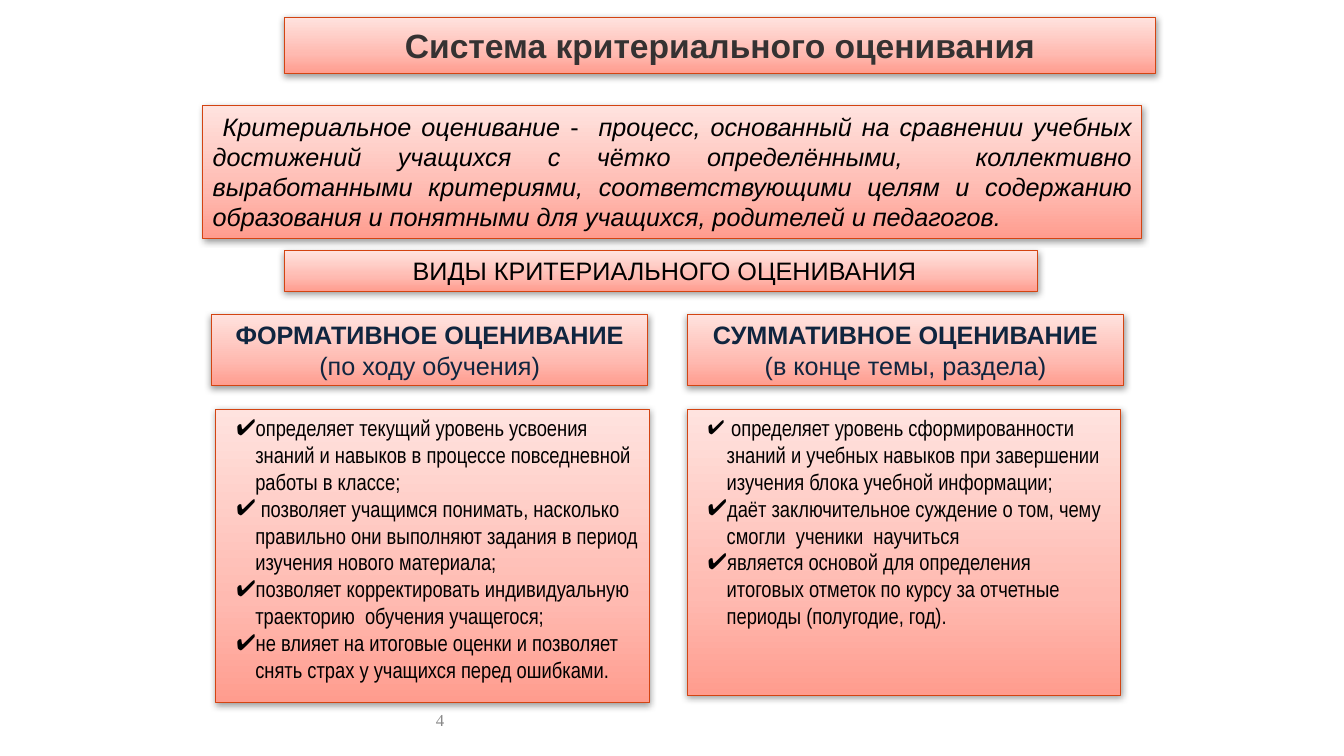
from lxml.etree import SubElement
from pptx import Presentation
from pptx.dml.color import RGBColor as RGB
from pptx.enum.shapes import MSO_SHAPE as SHAPE
from pptx.enum.text import MSO_ANCHOR as ANCHOR, MSO_AUTO_SIZE as AUTO, PP_ALIGN as ALIGN
from pptx.oxml.ns import qn
from pptx.util import Cm, Pt

COLORS = {"title": "353232", "text": "000000", "heading": "10253F", "number": "898989",
          "line": "D34412", "shadow": "000000"}
GRADIENT = {0: "FF9C8E", 35: "FFBAB1", 100: "FFE3DF"}


class Builder:
    """Holds the panel style and the current slide."""

    def __init__(self, prs):
        """Add a slide with a title and two lists."""
        self.s = prs.slides.add_slide(prs.slide_layouts[3])

    def place(self, sp, box):
        """Set the position and size in centimetres."""
        sp.left, sp.top, sp.width, sp.height = map(Cm, box)

    def decorate(self, sp):
        """Apply the gradient, outline and soft shadow."""
        sp.fill.gradient()
        sp.fill.gradient_angle = 90
        stops = sp._element.spPr.find(qn("a:gradFill")).find(qn("a:gsLst"))
        for stop in list(stops):
            stops.remove(stop)
        for pos, color in GRADIENT.items():
            stop = SubElement(stops, qn("a:gs"), pos=str(pos * 1000))
            SubElement(stop, qn("a:srgbClr"), val=color)
        sp.line.color.rgb = RGB.from_string(COLORS["line"])
        sp.line.width = Pt(0.75)
        sp.shadow.inherit = False
        effects = sp._element.spPr.find(qn("a:effectLst"))
        shadow = SubElement(effects, qn("a:outerShdw"), blurRad=str(Pt(5)), dist=str(Pt(1.6)),
                            dir="5400000", rotWithShape="0")
        color = SubElement(shadow, qn("a:srgbClr"), val=COLORS["shadow"])
        SubElement(color, qn("a:alpha"), val="38000")

    def add_text(self, sp, paragraphs, color="text", size=18, font="Arial",
                 align=ALIGN.CENTER, anchor=ANCHOR.MIDDLE):
        """Add paragraphs of (text, overrides) runs."""
        tf = sp.text_frame
        tf.word_wrap, tf.auto_size, tf.vertical_anchor = True, AUTO.NONE, anchor
        for i, runs in enumerate(paragraphs):
            p = tf.add_paragraph() if i else tf.paragraphs[0]
            p.alignment, p.space_before = align, Pt(0)
            for text, style in runs:
                r = p.add_run()
                r.text = text
                r.font.name, r.font.size = font, Pt(style.get("size", size))
                r.font.bold, r.font.italic = style.get("bold", False), style.get("italic", False)
                r.font.color.rgb = RGB.from_string(COLORS[color])

    def title(self, box, text):
        """Fill the title placeholder."""
        sp = self.s.shapes.title
        self.place(sp, box)
        self.decorate(sp)
        self.add_text(sp, [[(text, {"bold": True})]], "title", 24)

    def panel(self, box, paragraphs, **style):
        """Add a decorated rectangle with text."""
        sp = self.s.shapes.add_shape(SHAPE.RECTANGLE, *map(Cm, box))
        self.decorate(sp)
        self.add_text(sp, paragraphs, **style)

    def checklist(self, idx, box, items):
        """Fill a body placeholder with check-marked items."""
        sp = self.s.placeholders[idx]
        self.place(sp, box)
        self.decorate(sp)
        self.add_text(sp, items, size=16, font="Arial Narrow", align=ALIGN.LEFT,
                      anchor=ANCHOR.TOP)
        for p in sp.text_frame.paragraphs:
            pPr = p._p.get_or_add_pPr()
            pPr.set("marL", str(Cm(0.74)))
            pPr.set("indent", str(Cm(-0.48)))
            color = SubElement(pPr, qn("a:buClr"))
            SubElement(color, qn("a:srgbClr"), val=COLORS["text"])
            SubElement(pPr, qn("a:buFont"), typeface="Arial")
            SubElement(pPr, qn("a:buChar"), char="✔")

    def number(self, box, text):
        """Add the page number."""
        sp = self.s.shapes.add_textbox(*map(Cm, box))
        self.add_text(sp, [[(text, {})]], "number", 12, "Times New Roman", ALIGN.RIGHT)


def main():
    """Build and save the slide."""
    prs = Presentation()
    prs.slide_width, prs.slide_height = Cm(33.87), Cm(19.05)
    b = Builder(prs)
    b.title((7.16, 0.43, 21.97, 1.42), "Система критериального оценивания")
    b.number((5.94, 17.63, 5.51, 1.02), "4")

    b.checklist(2, (17.32, 10.31, 10.92, 7.21), [
        [(" ", {"size": 14}),
         ("определяет уровень сформированности знаний и учебных навыков при завершении "
          "изучения блока учебной информации;", {})],
        [("даёт заключительное суждение о том, чему смогли  ученики  научиться", {})],
        [("является основой для определения итоговых отметок по курсу за отчетные "
          "периоды (полугодие, год).", {})],
    ])
    b.checklist(1, (5.44, 10.31, 10.92, 7.39), [
        [("определяет текущий уровень усвоения знаний и навыков в процессе "
          "повседневной работы в классе;", {})],
        [(" позволяет учащимся понимать, насколько правильно они выполняют задания "
          "в период изучения нового материала;", {})],
        [("позволяет корректировать индивидуальную траекторию  обучения учащегося;", {})],
        [("не влияет на итоговые оценки и позволяет снять страх у учащихся "
          "перед ошибками.", {})],
    ])

    for left, kind, moment in (
        (5.33, "ФОРМАТИВНОЕ ОЦЕНИВАНИЕ", "(по ходу обучения)"),
        (17.32, "СУММАТИВНОЕ ОЦЕНИВАНИЕ", "(в конце темы, раздела)"),
    ):
        b.panel((left, 7.92, 11, 1.8), [[(kind, {"bold": True})], [(moment, {})]],
                color="heading")

    b.panel((7.16, 6.32, 19, 1.02), [[(" ВИДЫ КРИТЕРИАЛЬНОГО ОЦЕНИВАНИЯ", {})]],
            anchor=ANCHOR.TOP)
    b.panel((5.11, 2.67, 23.67, 3.33), [[
        (" Критериальное оценивание ", {"italic": True}),
        ("-  ", {}),
        ("процесс, основанный на сравнении учебных достижений учащихся с чётко "
         "определёнными,  коллективно выработанными критериями, соответствующими целям "
         "и содержанию образования и понятными для учащихся, родителей и педагогов.",
         {"italic": True}),
    ]], align=ALIGN.JUSTIFY, anchor=ANCHOR.TOP)
    prs.save("out.pptx")


if __name__ == "__main__":
    main()
